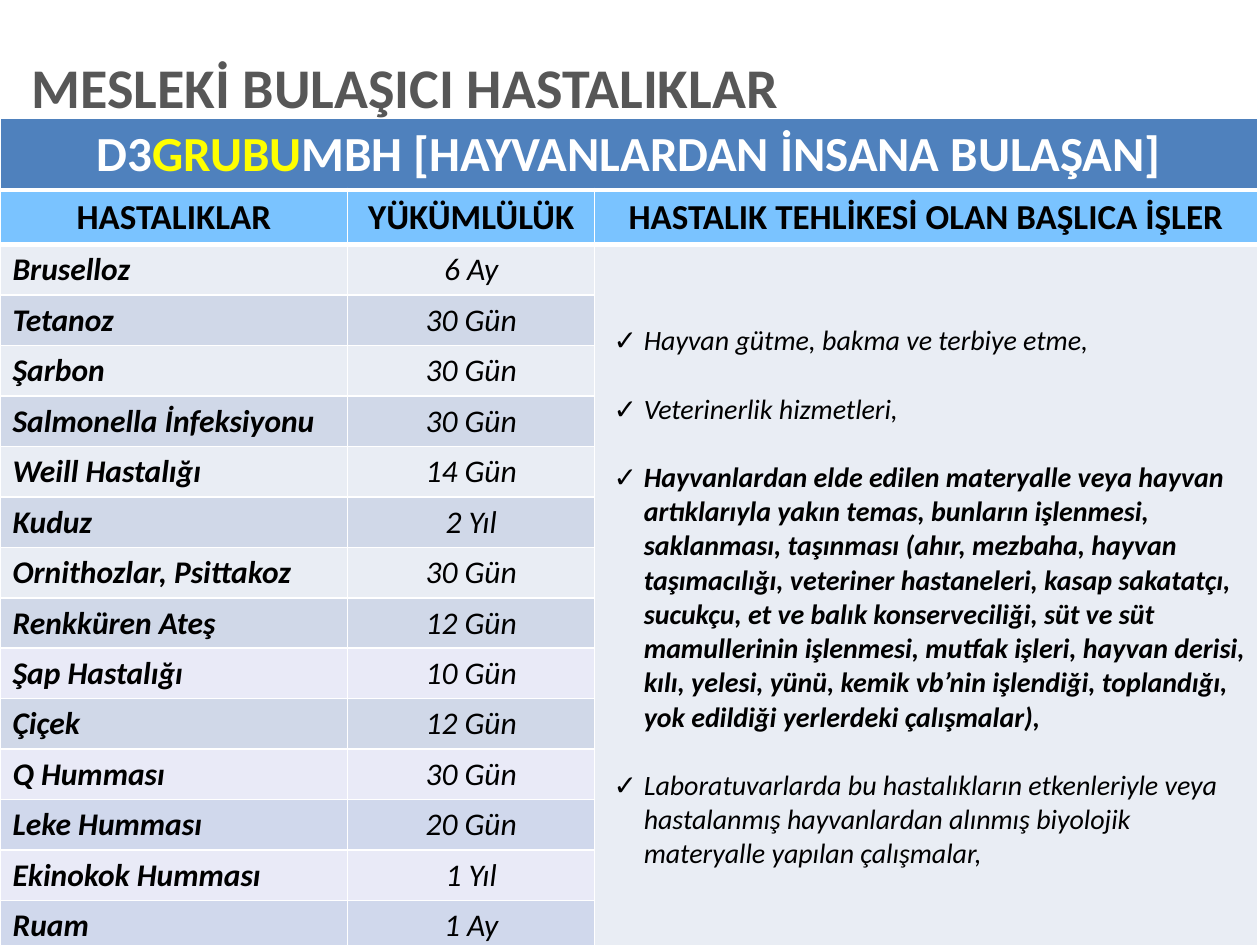
from lxml import etree
from pptx import Presentation
from pptx.dml.color import RGBColor
from pptx.enum.text import MSO_ANCHOR, PP_ALIGN
from pptx.oxml.ns import qn
from pptx.util import Inches, Pt

LEFT, MID = PP_ALIGN.LEFT, PP_ALIGN.CENTER
CENTRE = MSO_ANCHOR.MIDDLE
WIDE, HIGH = 10, 7.5
FONT = "Calibri"
BLACK, WHITE, GREY = "000000", "FFFFFF", "575757"
BLUE, SKY, YELLOW = "4F81BD", "7AC3FF", "FFFF00"
PALE, DARK, LILAC, STEEL = "E9EDF4", "D0D8E8", "E9EAF7", "D0D8EC"

COLS = [2.76, 1.96, 5.26]
HEADS = ["HASTALIKLAR", "YÜKÜMLÜLÜK", "HASTALIK TEHLİKESİ OLAN BAŞLICA İŞLER"]
ROWS = [
    ("Bruselloz", "6 Ay", PALE),
    ("Tetanoz", "30 Gün", DARK),
    ("Şarbon", "30 Gün", PALE),
    ("Salmonella İnfeksiyonu", "30 Gün", DARK),
    ("Weill Hastalığı", "14 Gün", PALE),
    ("Kuduz", "2 Yıl", DARK),
    ("Ornithozlar, Psittakoz", "30 Gün", PALE),
    ("Renkküren Ateş", "12 Gün", DARK),
    ("Şap Hastalığı", "10 Gün", LILAC),
    ("Çiçek", "12 Gün", DARK),
    ("Q Humması", "30 Gün", LILAC),
    ("Leke Humması", "20 Gün", STEEL),
    ("Ekinokok Humması", "1 Yıl", LILAC),
    ("Ruam", "1 Ay", STEEL),
]
JOBS = [
    ("Hayvan gütme, bakma ve terbiye etme,", False),
    ("Veterinerlik hizmetleri,", False),
    ("Hayvanlardan elde edilen materyalle veya hayvan artıklarıyla yakın "
     "temas, bunların işlenmesi, saklanması, taşınması (ahır, mezbaha, hayvan "
     "taşımacılığı, veteriner hastaneleri, kasap sakatatçı, sucukçu, et ve "
     "balık konserveciliği, süt ve süt mamullerinin işlenmesi, mutfak işleri, "
     "hayvan derisi, kılı, yelesi, yünü, kemik vb’nin işlendiği, toplandığı, "
     "yok edildiği yerlerdeki çalışmalar),", True),
    ("Laboratuvarlarda bu hastalıkların etkenleriyle veya hastalanmış "
     "hayvanlardan alınmış biyolojik materyalle yapılan çalışmalar,", False),
]


def paint(hue):
    return RGBColor.from_string(hue)


def write(para, parts, size, align=LEFT, bold=True, slant=False):
    """Fill a paragraph with (text, colour) runs."""
    para.alignment = align
    for text, hue in parts:
        run = para.add_run()
        run.text = text
        font = run.font
        font.name, font.size = FONT, Pt(size)
        font.bold, font.italic = bold, slant
        font.color.rgb = paint(hue)


def title(slide, box):
    """Place the slide title."""
    frame = slide.shapes.add_textbox(*map(Inches, box)).text_frame
    frame.word_wrap = True
    frame.vertical_anchor = CENTRE
    frame.margin_left = frame.margin_right = 0
    para = frame.paragraphs[0]
    para.line_spacing = 0.9
    write(para, [("MESLEKİ BULAŞICI HASTALIKLAR", GREY)], 32)


def edge(cell, top, base):
    """Draw white borders round a cell."""
    props = cell._tc.get_or_add_tcPr()
    for side, width in zip("LRTB", (1, 1, top, base)):
        line = etree.SubElement(props, qn("a:ln" + side), w=str(Pt(width)))
        fill = etree.SubElement(line, qn("a:solidFill"))
        etree.SubElement(fill, qn("a:srgbClr"), val=WHITE)


def style(cell, hue, top=1, base=1):
    """Set the borders, fill and anchor of a cell."""
    edge(cell, top, base)
    cell.fill.solid()
    cell.fill.fore_color.rgb = paint(hue)
    cell.vertical_anchor = CENTRE


def tick(para):
    """Give a paragraph a hanging check mark."""
    props = para._p.get_or_add_pPr()
    props.set("marL", str(Inches(0.39)))
    props.set("indent", str(Inches(-0.24)))
    etree.SubElement(props, qn("a:buFont"), typeface=FONT)
    etree.SubElement(props, qn("a:buChar"), char="✓")


def jobs(cell):
    """List the risky jobs in one tall cell."""
    cell.margin_left = cell.margin_right = 0
    cell.margin_top = cell.margin_bottom = 0
    frame = cell.text_frame
    for n, (text, bold) in enumerate(JOBS):
        para = frame.add_paragraph() if n else frame.paragraphs[0]
        tick(para)
        if n:
            para.space_before = Pt(19.5)
        write(para, [(text, BLACK)], 16, bold=bold, slant=True)


def grid(slide, box):
    """Build the table of diseases."""
    count = len(ROWS) + 2
    table = slide.shapes.add_table(count, len(COLS), *map(Inches, box)).table
    table.first_row = table.horz_banding = False
    for col, width in zip(table.columns, COLS):
        col.width = Inches(width)
    for row, height in zip(table.rows, [0.56, 0.38] + [0.39] * len(ROWS)):
        row.height = Inches(height)

    # Banner and column heads
    for c, head in enumerate(HEADS):
        style(table.cell(0, c), BLUE, base=3)
        cell = table.cell(1, c)
        style(cell, SKY, 3, 3)
        write(cell.text_frame.paragraphs[0], [(head, BLACK)], 20, MID)
    banner = table.cell(0, 0)
    banner.merge(table.cell(0, 2))
    write(banner.text_frame.paragraphs[0],
          [("D3", WHITE), ("GRUBU", YELLOW),
           ("MBH [HAYVANLARDAN İNSANA BULAŞAN]", WHITE)], 28, MID)

    # Diseases and their terms
    for r, (name, term, hue) in enumerate(ROWS, 2):
        top = 3 if r == 2 else 1
        for c, (text, align) in enumerate([(name, LEFT), (term, MID)]):
            cell = table.cell(r, c)
            style(cell, hue, top)
            write(cell.text_frame.paragraphs[0], [(text, BLACK)], 18, align,
                  bold=c == 0, slant=True)
        style(table.cell(r, 2), PALE, top)

    # Jobs beside all the diseases
    tall = table.cell(2, 2)
    tall.merge(table.cell(count - 1, 2))
    jobs(tall)


def main():
    deck = Presentation()
    deck.slide_width, deck.slide_height = Inches(WIDE), Inches(HIGH)
    slide = deck.slides.add_slide(deck.slide_layouts[6])
    title(slide, (0.25, 0.36, 9.64, 0.71))
    grid(slide, (0, 0.94, sum(COLS), 6.4))
    deck.save("out.pptx")


if __name__ == "__main__":
    main()
